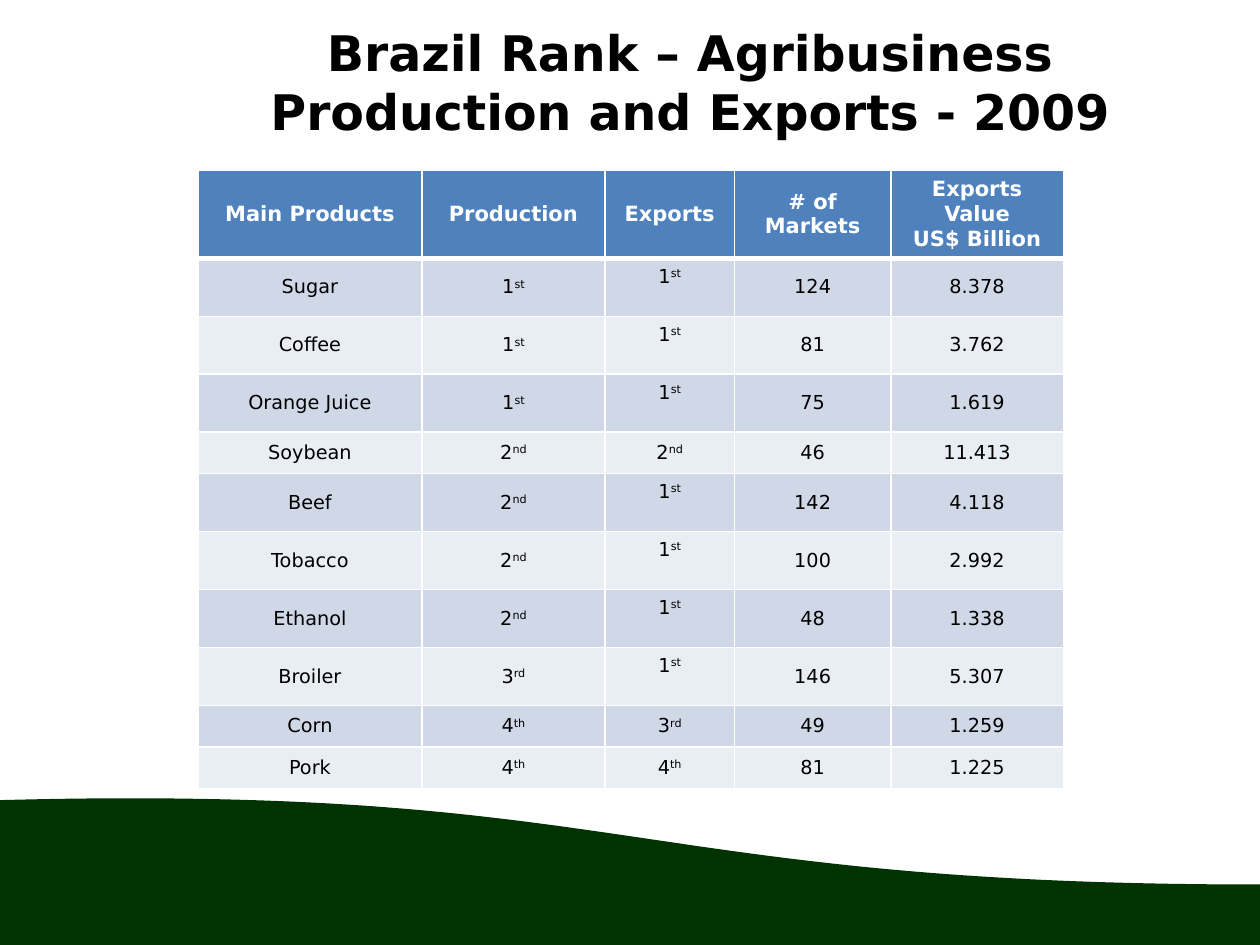
from lxml import etree
from pptx import Presentation
from pptx.dml.color import RGBColor
from pptx.enum.text import MSO_ANCHOR, PP_ALIGN
from pptx.oxml.ns import qn
from pptx.util import Inches, Pt

CENTER = PP_ALIGN.CENTER
MIDDLE = MSO_ANCHOR.MIDDLE
FONT = "DejaVu Sans"
BLACK, WHITE = "000000", "FFFFFF"
HEADER_BLUE = "4F81BD"
BANDS = ("D0D8E8", "E9EDF4")
HILL_GREEN = "003300"

HEADERS = ["Main Products", "Production", "Exports", "# of Markets",
           "Exports Value\nUS$ Billion"]
PRODUCTS = [
    ("Sugar", "1st", "1st", "124", "8.378"),
    ("Coffee", "1st", "1st", "81", "3.762"),
    ("Orange Juice", "1st", "1st", "75", "1.619"),
    ("Soybean", "2nd", "2nd", "46", "11.413"),
    ("Beef", "2nd", "1st", "142", "4.118"),
    ("Tobacco", "2nd", "1st", "100", "2.992"),
    ("Ethanol", "2nd", "1st", "48", "1.338"),
    ("Broiler", "3rd", "1st", "146", "5.307"),
    ("Corn", "4th", "3rd", "49", "1.259"),
    ("Pork", "4th", "4th", "81", "1.225"),
]
COLUMN_WIDTHS = [1.78, 1.45, 1.03, 1.24, 1.37]
EXPORTS_COLUMN = 2
RANK_COLUMNS = (1, EXPORTS_COLUMN)
HEADER_HEIGHT, TALL_ROW, SHORT_ROW = 0.68, 0.46, 0.33


def color(hex_value):
    return RGBColor.from_string(hex_value)


def add_run(paragraph, text, size, hex_value, bold=False, superscript=False):
    run = paragraph.add_run()
    run.text = text
    run.font.name = FONT
    run.font.size = Pt(size)
    run.font.bold = bold
    run.font.color.rgb = color(hex_value)
    if superscript:
        run.font._element.set("baseline", "30000")


def add_hill(slide, left, top, width, height):
    """Draw the ground: an S-shaped Bezier slope falling to the right."""
    bottom = top + height
    right, low, high = left + width, top + 0.68, top + 0.01
    middle = left + width / 2
    controls = [(left, high), (middle, top - 0.12), (middle, low), (right, low)]
    steps = 80
    slope = []
    for step in range(steps + 1):
        t = step / steps
        weights = ((1 - t) ** 3, 3 * t * (1 - t) ** 2, 3 * t ** 2 * (1 - t), t ** 3)
        slope.append(tuple(
            Inches(sum(w * point[axis] for w, point in zip(weights, controls)))
            for axis in (0, 1)))
    builder = slide.shapes.build_freeform(*slope[0], scale=1.0)
    corners = [(Inches(right), Inches(bottom)), (Inches(left), Inches(bottom))]
    builder.add_line_segments(slope[1:] + corners, close=True)
    hill = builder.convert_to_shape()
    hill.shadow.inherit = False
    hill.fill.solid()
    hill.fill.fore_color.rgb = color(HILL_GREEN)
    hill.line.fill.background()


def add_title(slide, left, top, width, height):
    box = slide.shapes.add_textbox(*map(Inches, (left, top, width, height)))
    frame = box.text_frame
    frame.word_wrap = True
    frame.vertical_anchor = MIDDLE
    paragraph = frame.paragraphs[0]
    paragraph.alignment = CENTER
    add_run(paragraph, "Brazil Rank – Agribusiness Production and Exports - 2009",
            28, BLACK, bold=True)


def style_cell(cell, fill, bottom_line=1):
    properties = cell._tc.get_or_add_tcPr()
    for side, points in (("L", 1), ("R", 1), ("T", 1), ("B", bottom_line)):
        line = etree.SubElement(properties, qn(f"a:ln{side}"), w=str(Pt(points)))
        solid = etree.SubElement(line, qn("a:solidFill"))
        etree.SubElement(solid, qn("a:srgbClr"), val=WHITE)
    cell.fill.solid()
    cell.fill.fore_color.rgb = color(fill)
    cell.vertical_anchor = MIDDLE


def fill_header(cell, label):
    style_cell(cell, HEADER_BLUE, bottom_line=3)
    for index, line in enumerate(label.split("\n")):
        frame = cell.text_frame
        paragraph = frame.add_paragraph() if index else frame.paragraphs[0]
        paragraph.alignment = CENTER
        add_run(paragraph, line, 12, WHITE, bold=True)


def fill_value(cell, value, band, is_rank):
    style_cell(cell, band)
    paragraph = cell.text_frame.paragraphs[0]
    paragraph.alignment = CENTER
    if is_rank:
        add_run(paragraph, value[:-2], 11, BLACK)
        add_run(paragraph, value[-2:], 11, BLACK, superscript=True)
    else:
        add_run(paragraph, value, 11, BLACK)


def add_ranking(slide, left, top, width, height):
    """Products exported in first place get tall rows with a raised rank."""
    table = slide.shapes.add_table(
        len(PRODUCTS) + 1, len(HEADERS),
        *map(Inches, (left, top, width, height))).table
    for column, column_width in zip(table.columns, COLUMN_WIDTHS):
        column.width = Inches(column_width)
    table.rows[0].height = Inches(HEADER_HEIGHT)
    for column, label in enumerate(HEADERS):
        fill_header(table.cell(0, column), label)
    for row, product in enumerate(PRODUCTS, start=1):
        leads = product[EXPORTS_COLUMN] == "1st"
        table.rows[row].height = Inches(TALL_ROW if leads else SHORT_ROW)
        for column, value in enumerate(product):
            fill_value(table.cell(row, column), value, BANDS[(row - 1) % 2],
                       column in RANK_COLUMNS)
        if leads:
            table.cell(row, EXPORTS_COLUMN).margin_bottom = Inches(0.22)


def main():
    presentation = Presentation()
    presentation.slide_width = Inches(10)
    presentation.slide_height = Inches(7.5)
    slide = presentation.slides.add_slide(presentation.slide_layouts[6])
    add_hill(slide, 0, 6.34, 10, 1.16)
    add_title(slide, 1.42, 0.02, 8.11, 1.25)
    add_ranking(slide, 1.57, 1.35, 6.87, 4.89)
    presentation.save("out.pptx")


if __name__ == "__main__":
    main()
